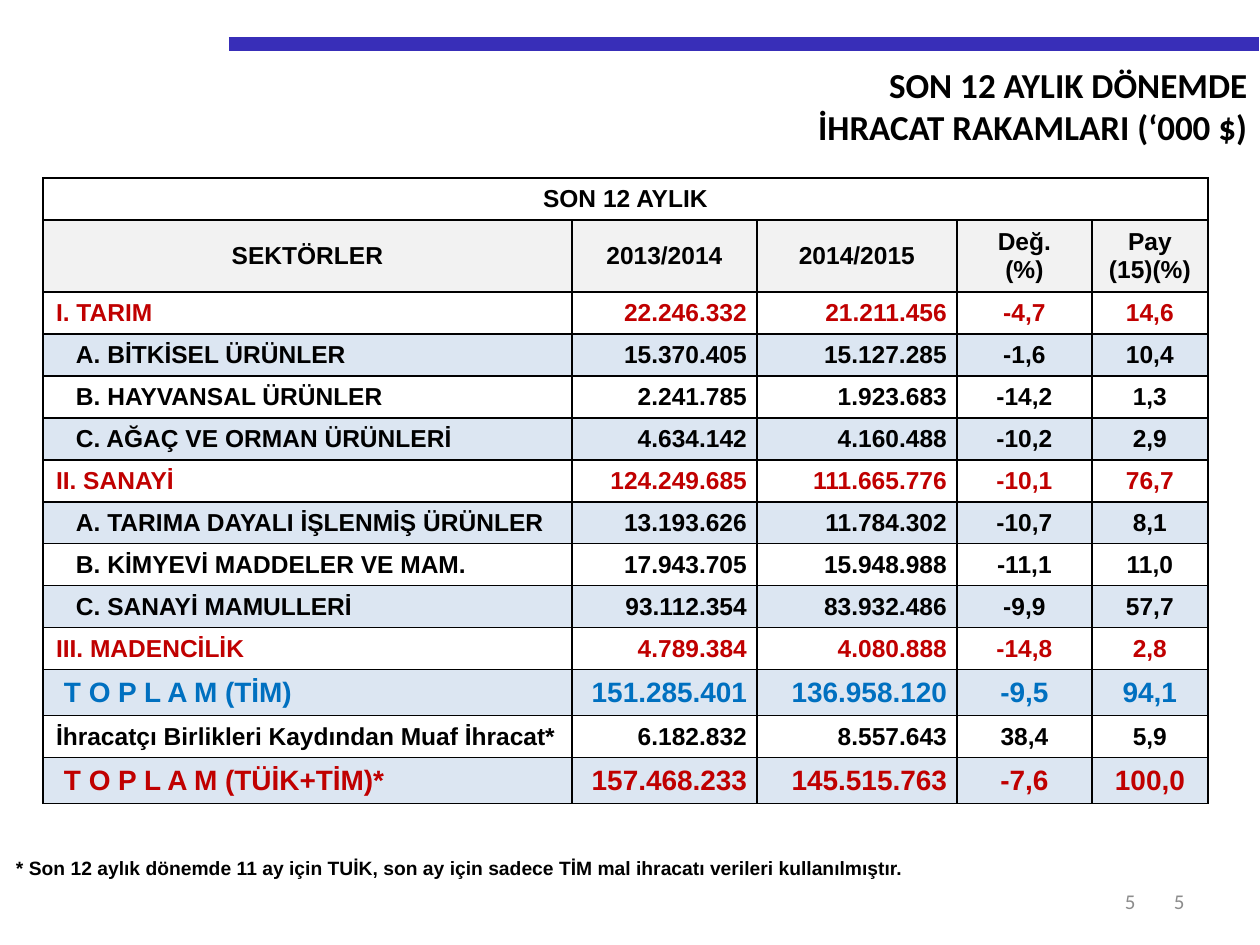
from lxml.etree import SubElement
from pptx import Presentation
from pptx.dml.color import RGBColor
from pptx.enum.shapes import MSO_CONNECTOR
from pptx.enum.text import MSO_ANCHOR as ANCHOR, PP_ALIGN as ALIGN
from pptx.oxml.ns import qn
from pptx.util import Pt

PX = 914400 / 126
BLACK, RED, BLUE = "000000", "C00000", "0070C0"
WHITE, GREY, PALE = "FFFFFF", "F2F2F2", "DCE6F2"
WIDTHS = [529, 185, 200, 135, 116]
ALIGNS = [ALIGN.LEFT, ALIGN.RIGHT, ALIGN.RIGHT, ALIGN.CENTER, ALIGN.CENTER]
INSETS = [(13, 6, 13, 6), (1, 1, 10, 0), (1, 1, 10, 0), (1, 1, 1, 0), (1, 1, 1, 0)]
DEFAULT_INSETS = (13, 6, 13, 6)
HEADERS = ["SEKTÖRLER", "2013/2014", "2014/2015", "Değ.\n(%)", "Pay\n(15)(%)"]
GROUP, ITEM, TOTAL, GRAND, EXEMPT = "group", "item", "total", "grand", "exempt"
STYLES = {
    GROUP: (RED, 14, 0, 42),
    ITEM: (BLACK, 14, 20, 42),
    TOTAL: (BLUE, 16, 8, 46),
    EXEMPT: (BLACK, 14, 0, 42),
    GRAND: (RED, 16, 8, 46),
}
ROWS = [
    (GROUP, "I. TARIM", "22.246.332", "21.211.456", "-4,7", "14,6"),
    (ITEM, "A. BİTKİSEL ÜRÜNLER", "15.370.405", "15.127.285", "-1,6", "10,4"),
    (ITEM, "B. HAYVANSAL ÜRÜNLER", "2.241.785", "1.923.683", "-14,2", "1,3"),
    (ITEM, "C. AĞAÇ VE ORMAN ÜRÜNLERİ", "4.634.142", "4.160.488", "-10,2", "2,9"),
    (GROUP, "II. SANAYİ", "124.249.685", "111.665.776", "-10,1", "76,7"),
    (ITEM, "A. TARIMA DAYALI İŞLENMİŞ ÜRÜNLER", "13.193.626", "11.784.302", "-10,7", "8,1"),
    (ITEM, "B. KİMYEVİ MADDELER VE MAM.", "17.943.705", "15.948.988", "-11,1", "11,0"),
    (ITEM, "C. SANAYİ MAMULLERİ", "93.112.354", "83.932.486", "-9,9", "57,7"),
    (GROUP, "III. MADENCİLİK", "4.789.384", "4.080.888", "-14,8", "2,8"),
    (TOTAL, "T O P L A M (TİM)", "151.285.401", "136.958.120", "-9,5", "94,1"),
    (EXEMPT, "İhracatçı Birlikleri Kaydından Muaf İhracat*", "6.182.832", "8.557.643", "38,4", "5,9"),
    (GRAND, "T O P L A M (TÜİK+TİM)*", "157.468.233", "145.515.763", "-7,6", "100,0"),
]
FOOTNOTE = ("* Son 12 aylık dönemde 11 ay için TUİK, son ay için sadece "
            "TİM mal ihracatı verileri kullanılmıştır.")


def px(n):
    """Turn px into EMU."""
    return round(n * PX)


def rgb(value):
    """Turn a hex string into a colour."""
    return RGBColor.from_string(value)


def write(tf, text, size, color, align, font="Arial", bold=True):
    """Fill a text frame with one paragraph per line of text."""
    tf.word_wrap = True
    for i, line in enumerate(text.split("\n")):
        p = tf.paragraphs[0] if i == 0 else tf.add_paragraph()
        p.text, p.alignment = line, align
        p.font.name, p.font.size, p.font.bold = font, Pt(size), bold
        p.font.color.rgb = rgb(color)


def text_box(s, box, text, size, color, bold, anchor):
    """Add a right-aligned Calibri text box."""
    tf = s.shapes.add_textbox(*map(px, box)).text_frame
    tf.vertical_anchor = anchor
    write(tf, text, size, color, ALIGN.RIGHT, "Calibri", bold)


def add_grid(s, left, top, widths, heights):
    """Add a table without banding, sized by its columns and rows."""
    box = (left, top, sum(widths), sum(heights))
    table = s.shapes.add_table(len(heights), len(widths), *map(px, box)).table
    table.first_row = table.horz_banding = False
    for col, width in zip(table.columns, widths):
        col.width = px(width)
    for row, height in zip(table.rows, heights):
        row.height = px(height)
    return table


def add_borders(cell):
    """Draw a black 1 pt line on each side of a cell."""
    tc_pr = cell._tc.get_or_add_tcPr()
    for side in ("lnL", "lnR", "lnT", "lnB"):
        ln = SubElement(tc_pr, qn(f"a:{side}"), w=str(Pt(1)))
        SubElement(SubElement(ln, qn("a:solidFill")), qn("a:srgbClr"), val=BLACK)


def set_cell(cell, text, size, color, align, fill, insets, indent=0):
    """Write a cell and set its fill and margins."""
    left, top, right, bottom = map(px, insets)
    cell.margin_left, cell.margin_top = left + px(indent), top
    cell.margin_right, cell.margin_bottom = right, bottom
    cell.vertical_anchor = ANCHOR.MIDDLE
    cell.fill.solid()
    cell.fill.fore_color.rgb = rgb(fill)
    write(cell.text_frame, text, size, color, align)


def header(s, left, top, width):
    """Place the rule and the title below it."""
    rule = s.shapes.add_connector(MSO_CONNECTOR.STRAIGHT, px(left), px(top),
                                  px(left + width), px(top))
    rule.line.color.rgb, rule.line.width = rgb("382EB8"), Pt(8.5)
    SubElement(rule._element.spPr, qn("a:effectLst"))
    text_box(s, (left - 95, top + 13, width + 96, 97),
             "SON 12 AYLIK DÖNEMDE\nİHRACAT RAKAMLARI (‘000 $)", 20, BLACK, True, ANCHOR.TOP)


def export_table(s, left, top):
    """Place the table of export figures by sector."""
    heights = [42, 72] + [STYLES[kind][3] for kind, *_ in ROWS]
    table = add_grid(s, left, top, WIDTHS, heights)
    for cell in table.iter_cells():
        add_borders(cell)
    table.cell(0, 0).merge(table.cell(0, 4))
    set_cell(table.cell(0, 0), "SON 12 AYLIK", 14, BLACK, ALIGN.CENTER, WHITE, DEFAULT_INSETS)
    for c, text in enumerate(HEADERS):
        set_cell(table.cell(1, c), text, 14, BLACK, ALIGN.CENTER, GREY, DEFAULT_INSETS)
    for r, (kind, *texts) in enumerate(ROWS):
        color, size, indent, _ = STYLES[kind]
        fill = PALE if r % 2 else WHITE
        for c, text in enumerate(texts):
            set_cell(table.cell(r + 2, c), text, size, color, ALIGNS[c], fill,
                     INSETS[c], indent if c == 0 else 0)


def footer(s, left, top):
    """Place the footnote table and the page numbers."""
    table = add_grid(s, left, top, [932], [39, 39])
    for r, text in enumerate([FOOTNOTE, ""]):
        set_cell(table.cell(r, 0), text, 11, BLACK, ALIGN.LEFT, WHITE, (1, 1, 1, 0))
    for x, width in ((868, 265), (888, 294)):
        text_box(s, (left + x, top + 27, width, 50), "5", 12, "8C8C8C", False, ANCHOR.MIDDLE)


def main():
    """Build and save the slide."""
    prs = Presentation()
    prs.slide_width, prs.slide_height = px(1260), px(945)
    s = prs.slides.add_slide(prs.slide_layouts[6])
    header(s, 229, 44, 1030)
    export_table(s, 43, 178)
    footer(s, 15, 849)
    prs.save("out.pptx")


if __name__ == "__main__":
    main()
